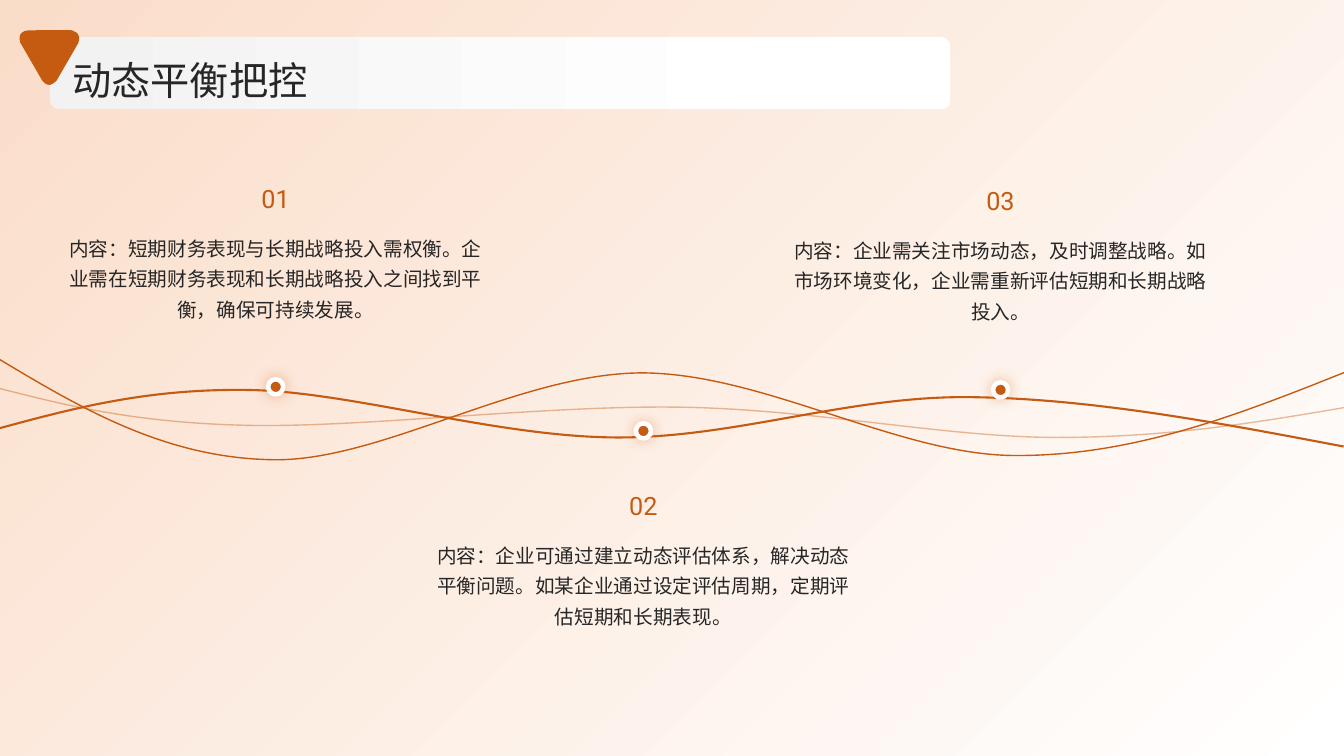
from lxml.etree import SubElement as Sub
from pptx import Presentation
from pptx.dml.color import RGBColor
from pptx.enum.shapes import MSO_SHAPE as Kind
from pptx.enum.text import MSO_ANCHOR as Anchor, PP_ALIGN as Align
from pptx.oxml.ns import qn
from pptx.util import Pt

WIDE, HIGH = 960, 540
RUST, INK, WHITE = "C55A11", "262626", "FFFFFF"
HAN, LATIN = "Noto Sans CJK SC", "Roboto"
COL = 295.2  # column width

# Center x, number top, dot center y, number, text
ITEMS = [
    (196.9, 101.5, 276.3, "01",
     "内容：短期财务表现与长期战略投入需权衡。企业需在短期财务表现和长期战略投入之间找到平衡，确保可持续发展。"),
    (459.6, 320.6, 307.8, "02",
     "内容：企业可通过建立动态评估体系，解决动态平衡问题。如某企业通过设定评估周期，定期评估短期和长期表现。"),
    (714.7, 102.8, 278.5, "03",
     "内容：企业需关注市场动态，及时调整战略。如市场环境变化，企业需重新评估短期和长期战略投入。"),
]

# Line width, opacity, box, start, then curves of two handles and an end
WAVES = [
    (1.5, 100, (-0.7, 278.6, 960.5, 40.4), (-0.7, 306), [
        [(52.6, 291.6), (105.8, 277.2), (179.3, 278.6)],
        [(252, 280.1), (353.5, 311.8), (439.2, 312.5)],
        [(524.2, 313.2), (604.8, 283), (691.2, 283.7)],
        [(777.6, 284.4), (869, 301.7), (959.8, 319)]]),
    (1, 40, (-4.3, 276.5, 966.2, 36), (-4.3, 276.5), [
        [(43.9, 288.7), (92.2, 301.7), (174.2, 303.8)],
        [(255.6, 306), (388.1, 289.4), (485.3, 290.9)],
        [(581.8, 292.3), (675.4, 312.5), (755.3, 312.5)],
        [(834.5, 312.5), (898.6, 301.7), (961.9, 290.9)]]),
    (1, 100, (-2.2, 255.6, 963.4, 72.8), (-2.2, 255.6), [
        [(57.6, 291.6), (117.4, 326.9), (193.7, 328.4)],
        [(270.7, 330.5), (369.4, 267.1), (457.9, 266.4)],
        [(546.5, 266.4), (643, 326.2), (727.2, 325.4)],
        [(810.7, 325.4), (885.6, 295.9), (961.2, 265.7)]]),
]

# Rounded triangle before its turn: single points are straight sides
WEDGE = [
    [(33.2, 17.8)],
    [(33.2, 17.8), (38.6, 11), (43.9, 17.8)],
    [(59.2, 44.3)],
    [(59.2, 44.3), (63, 52.7), (54.1, 53.5)],
    [(23.2, 53.5)],
    [(23.2, 53.5), (14.4, 52.7), (18.1, 44.2)],
]


def paint(text):
    return RGBColor.from_string(text)


def blend(fill, stops, angle):
    fill.gradient()
    fill.gradient_angle = angle
    for stop, (place, tint) in zip(fill.gradient_stops, stops):
        stop.position = place
        stop.color.rgb = paint(tint)


def add_form(slide, kind, left, top, width, height):
    form = slide.shapes.add_shape(kind, Pt(left), Pt(top), Pt(width), Pt(height))
    form.shadow.inherit = False
    form.line.fill.background()
    return form


def add_path(slide, box, start, parts, close=False):
    """Build an outline from the ends, then bend its curved segments."""
    left, top, width, height = box
    pen = slide.shapes.build_freeform(Pt(start[0]), Pt(start[1]))
    pen.add_line_segments([(Pt(x), Pt(y)) for x, y in (p[-1] for p in parts)], close=close)
    form = pen.convert_to_shape()
    form.shadow.inherit = False
    form.left, form.top, form.width, form.height = map(Pt, box)

    track = form._element.spPr.find(".//" + qn("a:path"))
    track.set("w", str(Pt(width)))
    track.set("h", str(Pt(height)))
    for node, part in zip(list(track), [[start], *parts]):
        if len(part) == 3:
            node.tag = qn("a:cubicBezTo")
        for mark in list(node):
            node.remove(mark)
        for x, y in part:
            Sub(node, qn("a:pt"), x=str(Pt(x - left)), y=str(Pt(y - top)))
    return form


def add_wave(slide, width, alpha, box, start, parts):
    wave = add_path(slide, box, start, parts)
    wave.fill.background()
    wave.line.width = Pt(width)
    wave.line.color.rgb = paint(RUST)
    if alpha < 100:
        tint = wave._element.spPr.find(qn("a:ln")).find(".//" + qn("a:srgbClr"))
        Sub(tint, qn("a:alpha"), val=str(alpha * 1000))


def add_dot(slide, x, y, size=10.8):
    dot = add_form(slide, Kind.OVAL, x - size / 2, y - size / 2, size, size)
    dot.fill.solid()
    dot.fill.fore_color.rgb = paint(RUST)
    dot.line.color.rgb = paint(WHITE)
    dot.line.width = Pt(3.25)
    # Soft glow
    glow = Sub(dot._element.spPr.find(qn("a:effectLst")), qn("a:outerShdw"),
               blurRad=str(Pt(10)), dist="0", dir="0", algn="ctr", rotWithShape="0")
    tint = Sub(glow, qn("a:srgbClr"), val="E06613")
    Sub(tint, qn("a:alpha"), val="40000")


def add_text(slide, left, top, width, height, text, size, font, tint,
             align=Align.CENTER, anchor=Anchor.TOP, space=None, inset=(0, 0)):
    box = slide.shapes.add_textbox(Pt(left), Pt(top), Pt(width), Pt(height))
    frame = box.text_frame
    frame.word_wrap = True
    frame.vertical_anchor = anchor
    frame.margin_left = frame.margin_right = Pt(inset[0])
    frame.margin_top = frame.margin_bottom = Pt(inset[1])
    para = frame.paragraphs[0]
    para.alignment = align
    para.line_spacing = space
    run = para.add_run()
    run.text = text
    run.font.size = Pt(size)
    run.font.name = font
    run.font.color.rgb = paint(tint)
    Sub(run.font._element, qn("a:ea"), typeface=font)


def add_item(slide, x, top, number, text):
    left = x - COL / 2
    add_text(slide, left, top + 62.6, COL, 97.2, text, 14, HAN, INK, space=1.3)
    add_text(slide, left, top, COL, 54.7, number, 18, LATIN, RUST,
             anchor=Anchor.BOTTOM, inset=(7.2, 3.6))


def add_head(slide, title):
    bar = add_form(slide, Kind.ROUNDED_RECTANGLE, 35.7, 26.6, 643.3, 51.5)
    bar.adjustments[0] = 0.14
    blend(bar.fill, [(0, "F2F2F2"), (0.8, WHITE)], 0)
    add_text(slide, 51.8, 36.7, 840.2, 36.7, title, 28, HAN, INK,
             align=Align.LEFT, anchor=Anchor.MIDDLE, space=1.1)
    wedge = add_path(slide, (17.4, 15.3, 42.5, 38.8), (18.1, 44.2), WEDGE, close=True)
    wedge.rotation = 60
    wedge.fill.solid()
    wedge.fill.fore_color.rgb = paint(RUST)
    wedge.line.fill.background()


def main():
    deck = Presentation()
    deck.slide_width, deck.slide_height = Pt(WIDE), Pt(HIGH)
    slide = deck.slides.add_slide(deck.slide_layouts[6])

    # Backdrop
    back = add_form(slide, Kind.RECTANGLE, 0, 0, WIDE, HIGH)
    blend(back.fill, [(0, WHITE), (1, "FADDC9")], 135)

    # Waves, with a dot for each item
    for wave in WAVES:
        add_wave(slide, *wave)
    for x, _, y, _, _ in ITEMS:
        add_dot(slide, x, y)

    # Numbered texts
    for x, top, _, number, text in ITEMS:
        add_item(slide, x, top, number, text)

    # Title
    add_head(slide, "动态平衡把控")
    deck.save("out.pptx")


if __name__ == "__main__":
    main()
